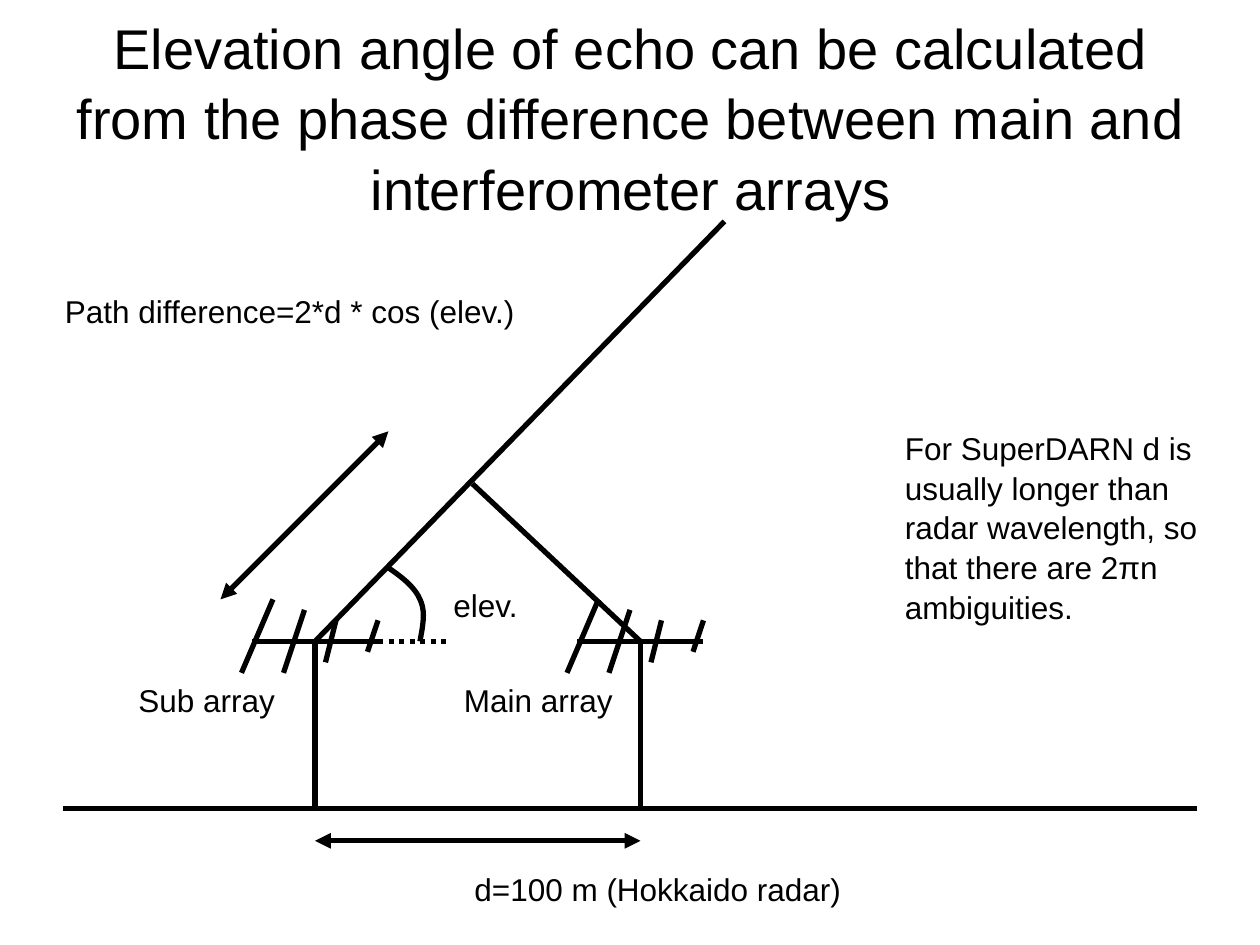
from typing import NamedTuple

from lxml import etree
from pptx import Presentation
from pptx.dml.color import RGBColor
from pptx.enum.dml import MSO_LINE
from pptx.enum.shapes import MSO_CONNECTOR
from pptx.enum.text import MSO_ANCHOR, PP_ALIGN
from pptx.oxml.ns import qn
from pptx.util import Pt

STRAIGHT = MSO_CONNECTOR.STRAIGHT
DOTTED = MSO_LINE.ROUND_DOT
MIDDLE = MSO_ANCHOR.MIDDLE
CENTER = PP_ALIGN.CENTER

FONT = "Arial"
BLACK = "000000"
LINE_WIDTH = 3

GROUND_Y = 462
ARRAY_Y = 366.5
SUB_X, MAIN_X = 180, 366


class Point(NamedTuple):
    x: float
    y: float


class Line(NamedTuple):
    start: Point
    end: Point
    arrows: bool = False
    dotted: bool = False


class Label(NamedTuple):
    text: str
    left: float
    top: float
    width: float
    height: float = 29


# Antenna elements, relative to the top of the mast
ELEMENTS = [
    Line(Point(-24, -24), Point(-42, 18)),
    Line(Point(-6, -18), Point(-18, 18)),
    Line(Point(12, -12), Point(6, 12)),
    Line(Point(36, -12), Point(30, 6)),
]

SUB_TOP, MAIN_TOP = Point(SUB_X, ARRAY_Y), Point(MAIN_X, ARRAY_Y)

LINES = [
    Line(Point(36, GROUND_Y), Point(684, GROUND_Y)),
    Line(Point(SUB_X, 480.5), Point(MAIN_X, 480.5), arrows=True),
    Line(SUB_TOP, Point(414, 126.5)),
    Line(MAIN_TOP, Point(270, 276.5)),
    Line(Point(126, 342.5), Point(222, 246.5), arrows=True),
    Line(SUB_TOP, Point(258, ARRAY_Y), dotted=True),
]

ANGLE_CURVES = [
    (Point(222, 324.5), Point(230, 330), Point(237, 335.5), Point(240, 342.5)),
    (Point(240, 342.5), Point(243.5, 349.5), Point(241.5, 358), Point(240, ARRAY_Y)),
]

LABELS = [
    Label("d=100 m (Hokkaido radar)", 264, 492.5, 348),
    Label("Path difference=2*d * cos (elev.)", 30, 162.5, 284.5),
    Label("Main array", 258, 384.5, 210),
    Label("Sub array", 72, 384.5, 168),
    Label(
        "For SuperDARN d is usually longer than radar wavelength, so that "
        "there are 2πn ambiguities.",
        510, 240.5, 210, 116.5,
    ),
    Label("elev.", 252, 330.5, 132),
]


def color(value: str) -> RGBColor:
    return RGBColor.from_string(value)


def style_line(shape) -> None:
    shape.line.color.rgb = color(BLACK)
    shape.line.width = Pt(LINE_WIDTH)


def style_text(frame, text: str, size: float) -> None:
    frame.word_wrap = True
    frame.text = text
    paragraph = frame.paragraphs[0]
    paragraph.line_spacing = 1.05
    paragraph.font.name = FONT
    paragraph.font.size = Pt(size)
    paragraph.font.color.rgb = color(BLACK)


def draw_line(page, line: Line) -> None:
    connector = page.shapes.add_connector(
        STRAIGHT, *(Pt(value) for value in (*line.start, *line.end))
    )
    style_line(connector)
    if line.dotted:
        connector.line.dash_style = DOTTED
    if line.arrows:
        outline = connector.line._get_or_add_ln()
        for end in ("a:headEnd", "a:tailEnd"):
            etree.SubElement(outline, qn(end), type="triangle")
    etree.SubElement(connector._element.spPr, qn("a:effectLst"))


def draw_array(page, top: Point) -> None:
    """Draw a mast with its boom and antenna elements."""
    draw_line(page, Line(Point(top.x - 36, top.y), Point(top.x + 36, top.y)))
    draw_line(page, Line(top, Point(top.x, GROUND_Y)))
    for start, end, *_ in ELEMENTS:
        draw_line(page, Line(
            Point(top.x + start.x, top.y + start.y),
            Point(top.x + end.x, top.y + end.y),
        ))


def bezier(curve: tuple[Point, ...], t: float) -> tuple[int, int]:
    """Return the point at t on a cubic curve, in slide units."""
    weights = ((1 - t) ** 3, 3 * t * (1 - t) ** 2, 3 * t**2 * (1 - t), t**3)
    x, y = (
        sum(weight * value for weight, value in zip(weights, axis))
        for axis in zip(*curve)
    )
    return Pt(x), Pt(y)


def draw_angle(page, steps: int = 10) -> None:
    points = [
        bezier(curve, step / steps)
        for curve in ANGLE_CURVES
        for step in range(1, steps + 1)
    ]
    builder = page.shapes.build_freeform(*bezier(ANGLE_CURVES[0], 0))
    builder.add_line_segments(points, close=False)
    arc = builder.convert_to_shape()
    arc.shadow.inherit = False
    arc.fill.background()
    style_line(arc)


def draw_label(page, label: Label) -> None:
    box = page.shapes.add_textbox(
        Pt(label.left), Pt(label.top), Pt(label.width), Pt(label.height)
    )
    style_text(box.text_frame, label.text, 18)


def set_title(page, text: str) -> None:
    title = page.shapes.title
    title.left, title.top, title.width, title.height = Pt(36.5), Pt(21), Pt(648), Pt(90)
    style_text(title.text_frame, text, 32)
    title.text_frame.vertical_anchor = MIDDLE
    title.text_frame.paragraphs[0].alignment = CENTER


def main() -> None:
    deck = Presentation()
    deck.slide_width, deck.slide_height = Pt(720), Pt(540)
    page = deck.slides.add_slide(deck.slide_layouts[5])
    set_title(
        page,
        "Elevation angle of echo can be calculated from the phase difference "
        "between main and interferometer arrays",
    )
    for top in (SUB_TOP, MAIN_TOP):
        draw_array(page, top)
    for line in LINES:
        draw_line(page, line)
    draw_angle(page)
    for label in LABELS:
        draw_label(page, label)
    deck.save("out.pptx")


if __name__ == "__main__":
    main()
